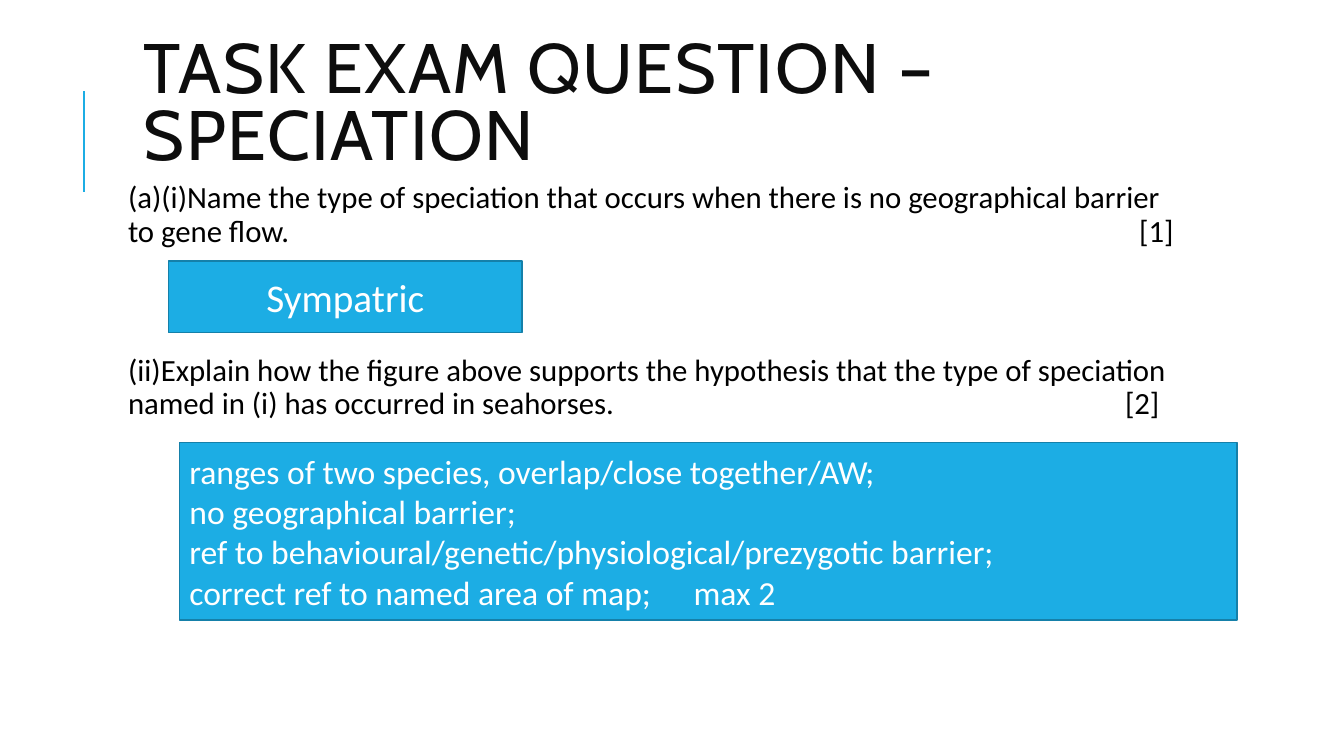
from lxml import etree
from pptx import Presentation
from pptx.dml.color import RGBColor
from pptx.enum.shapes import MSO_CONNECTOR, MSO_SHAPE
from pptx.enum.text import MSO_ANCHOR, PP_ALIGN
from pptx.oxml.ns import qn
from pptx.util import Inches, Pt

RECTANGLE = MSO_SHAPE.RECTANGLE
STRAIGHT = MSO_CONNECTOR.STRAIGHT
TOP, MIDDLE = MSO_ANCHOR.TOP, MSO_ANCHOR.MIDDLE
LEFT, CENTER = PP_ALIGN.LEFT, PP_ALIGN.CENTER

COLOURS = {"accent": "1CADE4", "border": "1580A9", "title": "0D0D0D",
           "question": "000000", "answer": "FFFFFF"}
TITLE = "TASK EXAM QUESTION – SPECIATION"
TITLE_AREA = (1.33, 0.24, 10.63, 1.64)
QUESTION_LEFT, QUESTION_WIDTH, QUESTION_HEIGHT = 1.22, 10.53, 0.8
QUESTION_INSET = 0.05
QUESTIONS = [
    ("(a)(i)Name the type of speciation that occurs when there is no "
     "geographical barrier to gene flow.", "[1]", 1.76, 10.37),
    ("(ii)Explain how the figure above supports the hypothesis that the type "
     "of speciation named in (i) has occurred in seahorses.", "[2]", 3.47, 10.23),
]
ANSWERS = [
    (["Sympatric"], (1.67, 2.59, 3.51, 0.71), 28, CENTER),
    (["ranges of two species, overlap/close together/AW;",
      "no geographical barrier;",
      "ref to behavioural/genetic/physiological/prezygotic barrier;",
      "correct ref to named area of map;\tmax 2"],
     (1.78, 4.39, 10.49, 1.76), 24, LEFT),
]


def colour(name):
    return RGBColor.from_string(COLOURS[name])


def write(shape, lines, size, font, ink, anchor=MIDDLE, align=LEFT, spacing=1.0):
    frame = shape.text_frame
    frame.word_wrap = True
    frame.vertical_anchor = anchor
    para = frame.paragraphs[0]
    para.alignment = align
    para.line_spacing = spacing
    for number, line in enumerate(lines):
        if number:
            para.add_line_break()
        span = para.add_run()
        span.text = line
        span.font.size = Pt(size)
        span.font.name = font
        span.font.color.rgb = colour(ink)
    return para


def add_title(page):
    box = page.shapes.add_textbox(*map(Inches, TITLE_AREA))
    para = write(box, [TITLE], 50, "Cabin", "title", spacing=0.8)
    para.runs[0].font._element.set("spc", "100")


def add_question(page, question, mark, top, mark_edge):
    area = (QUESTION_LEFT, top, QUESTION_WIDTH, QUESTION_HEIGHT)
    box = page.shapes.add_textbox(*map(Inches, area))
    frame = box.text_frame
    frame.margin_left = frame.margin_right = Inches(QUESTION_INSET)
    frame.margin_top = frame.margin_bottom = Inches(QUESTION_INSET)
    para = write(box, [f"{question}\t{mark}"], 22, "Calibri", "question", TOP, spacing=0.9)
    tabs = etree.SubElement(para._p.get_or_add_pPr(), qn("a:tabLst"))
    etree.SubElement(tabs, qn("a:tab"), pos=str(Inches(mark_edge)), algn="r")


def add_answer(page, lines, area, size, align):
    box = page.shapes.add_shape(RECTANGLE, *map(Inches, area))
    box.shadow.inherit = False
    box.fill.solid()
    box.fill.fore_color.rgb = colour("accent")
    box.line.color.rgb = colour("border")
    box.line.width = Pt(1.25)
    write(box, lines, size, "Calibri", "answer", align=align)


def add_title_rule(page):
    ends = (0.83, 1.9, 0.83, 0.9)
    rule = page.shapes.add_connector(STRAIGHT, *map(Inches, ends))
    rule.line.color.rgb = colour("accent")
    rule.line.width = Pt(1.5)
    etree.SubElement(rule._element.spPr, qn("a:effectLst"))


def main():
    deck = Presentation()
    deck.slide_width, deck.slide_height = Inches(13.33), Inches(7.5)
    page = deck.slides.add_slide(deck.slide_layouts[6])
    add_title_rule(page)
    add_title(page)
    for question in QUESTIONS:
        add_question(page, *question)
    for answer in ANSWERS:
        add_answer(page, *answer)
    deck.save("out.pptx")


if __name__ == "__main__":
    main()
